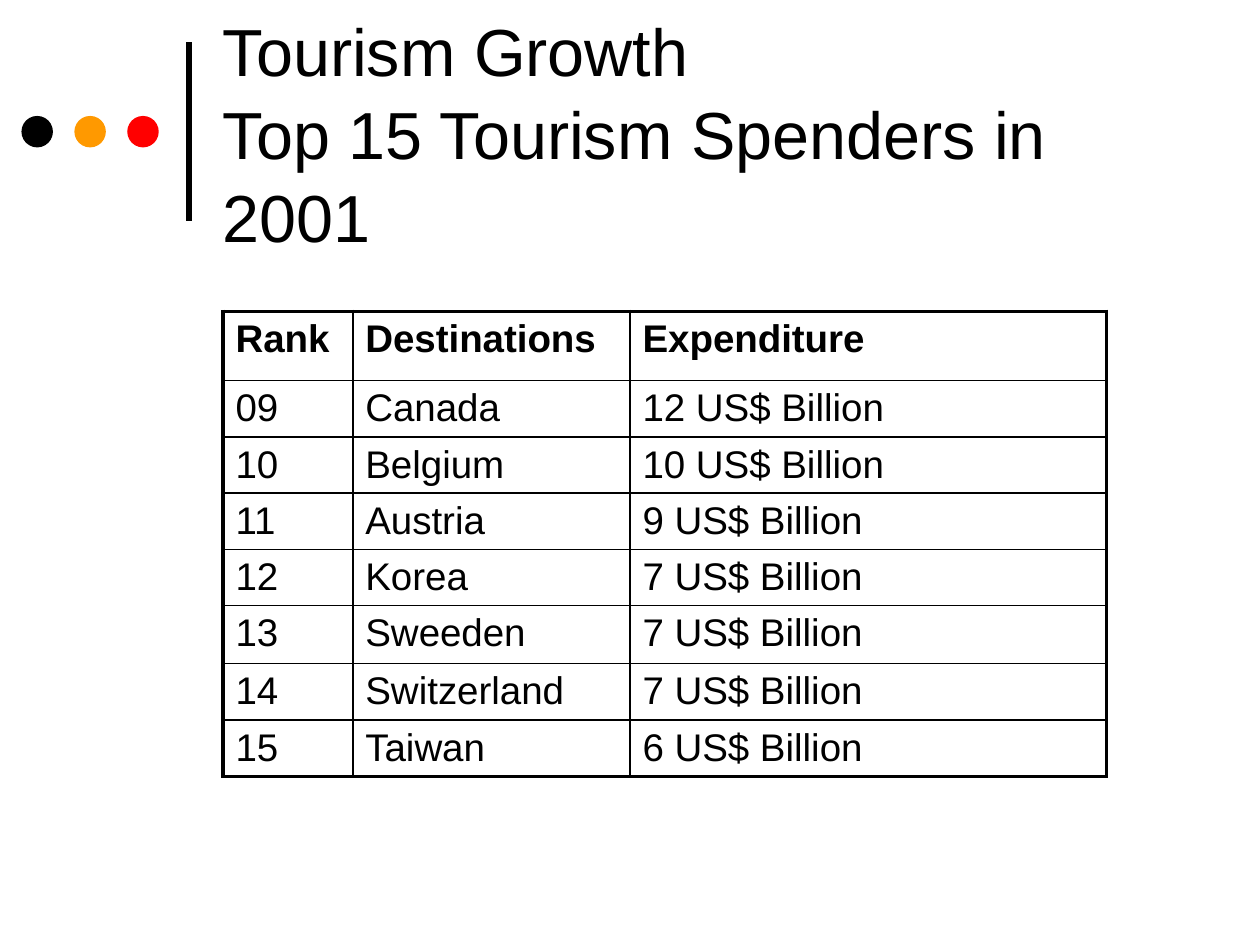
from dataclasses import dataclass

from lxml.etree import SubElement
from pptx import Presentation
from pptx.dml.color import RGBColor
from pptx.enum.shapes import MSO_CONNECTOR as Connector, MSO_SHAPE as Shape
from pptx.enum.text import MSO_ANCHOR as Anchor
from pptx.oxml.ns import qn
from pptx.slide import Slide
from pptx.util import Inches, Pt

COLORS = {"black": "000000", "orange": "FF9900", "red": "FF0000"}
COLUMN_WIDTHS = [1.03, 2.2, 3.78]
ROW_HEIGHTS = [0.55] + [0.44] * 4 + [0.46] + [0.44] * 2
SPENDERS = [
    ("Rank", "Destinations", "Expenditure"),
    ("09", "Canada", "12 US$ Billion"),
    ("10", "Belgium", "10 US$ Billion"),
    ("11", "Austria", "9 US$ Billion"),
    ("12", "Korea", "7 US$ Billion"),
    ("13", "Sweeden", "7 US$ Billion"),
    ("14", "Switzerland", "7 US$ Billion"),
    ("15", "Taiwan", "6 US$ Billion"),
]


def rgb(name):
    return RGBColor.from_string(COLORS[name])


@dataclass
class SlideBuilder:
    """Draws styled elements on the current slide."""

    slide: Slide
    font: str = "Arial"
    ink: str = "black"
    inner_border: float = 1
    outer_border: float = 2.25

    def style(self, paragraph, size, bold=False):
        font = paragraph.font
        font.name, font.size, font.bold = self.font, Pt(size), bold
        font.color.rgb = rgb(self.ink)

    def rule(self, x, top, bottom, width):
        line = self.slide.shapes.add_connector(
            Connector.STRAIGHT, Inches(x), Inches(bottom), Inches(x), Inches(top))
        line.line.color.rgb = rgb(self.ink)
        line.line.width = Pt(width)
        SubElement(line._element.spPr, qn("a:effectLst"))

    def dot(self, left, top, size, color):
        dot = self.slide.shapes.add_shape(
            Shape.OVAL, Inches(left), Inches(top), Inches(size), Inches(size))
        dot.shadow.inherit = False
        dot.fill.solid()
        dot.fill.fore_color.rgb = rgb(color)
        dot.line.fill.background()

    def title(self, text, left, top, width, height, size):
        frame = self.slide.shapes.add_textbox(
            Inches(left), Inches(top), Inches(width), Inches(height)).text_frame
        frame.word_wrap = True
        frame.vertical_anchor = Anchor.MIDDLE
        heading = frame.paragraphs[0]
        heading.text = text
        heading.line_spacing = 1.04
        self.style(heading, size)

    def border(self, cell, side, width):
        edge = SubElement(cell._tc.get_or_add_tcPr(), qn(f"a:ln{side}"), w=str(Pt(width)))
        fill = SubElement(edge, qn("a:solidFill"))
        SubElement(fill, qn("a:srgbClr"), val=COLORS[self.ink])

    def table(self, rows, left, top, widths, heights, size):
        table = self.slide.shapes.add_table(
            len(rows), len(widths), Inches(left), Inches(top),
            Inches(sum(widths)), Inches(sum(heights))).table
        table.horz_banding = False
        for column, width in zip(table.columns, widths):
            column.width = Inches(width)
        for row, height in zip(table.rows, heights):
            row.height = Inches(height)
        for r, values in enumerate(rows):
            for c, value in enumerate(values):
                cell = table.cell(r, c)
                cell.margin_bottom = Inches(0.03)
                cell.text = value
                self.style(cell.text_frame.paragraphs[0], size, bold=r == 0)
                outer_sides = {"L": c == 0, "R": c == len(widths) - 1,
                               "T": r == 0, "B": r == len(rows) - 1}
                for side, is_outer in outer_sides.items():
                    self.border(cell, side, self.outer_border if is_outer else self.inner_border)
                cell.fill.background()


def main():
    deck = Presentation()
    deck.slide_width, deck.slide_height = Inches(10), Inches(7.5)
    builder = SlideBuilder(deck.slides.add_slide(deck.slide_layouts[6]))
    builder.rule(1.5, 0.33, 1.75, 3)
    for i, color in enumerate(COLORS):
        builder.dot(0.17 + 0.42 * i, 0.92, 0.25, color)
    builder.title("Tourism Growth\vTop 15 Tourism Spenders in 2001", 1.67, 0.21, 7.67, 1.67, 38)
    builder.table(SPENDERS, 1.77, 2.47, COLUMN_WIDTHS, ROW_HEIGHTS, 22)
    deck.save("out.pptx")


if __name__ == "__main__":
    main()
